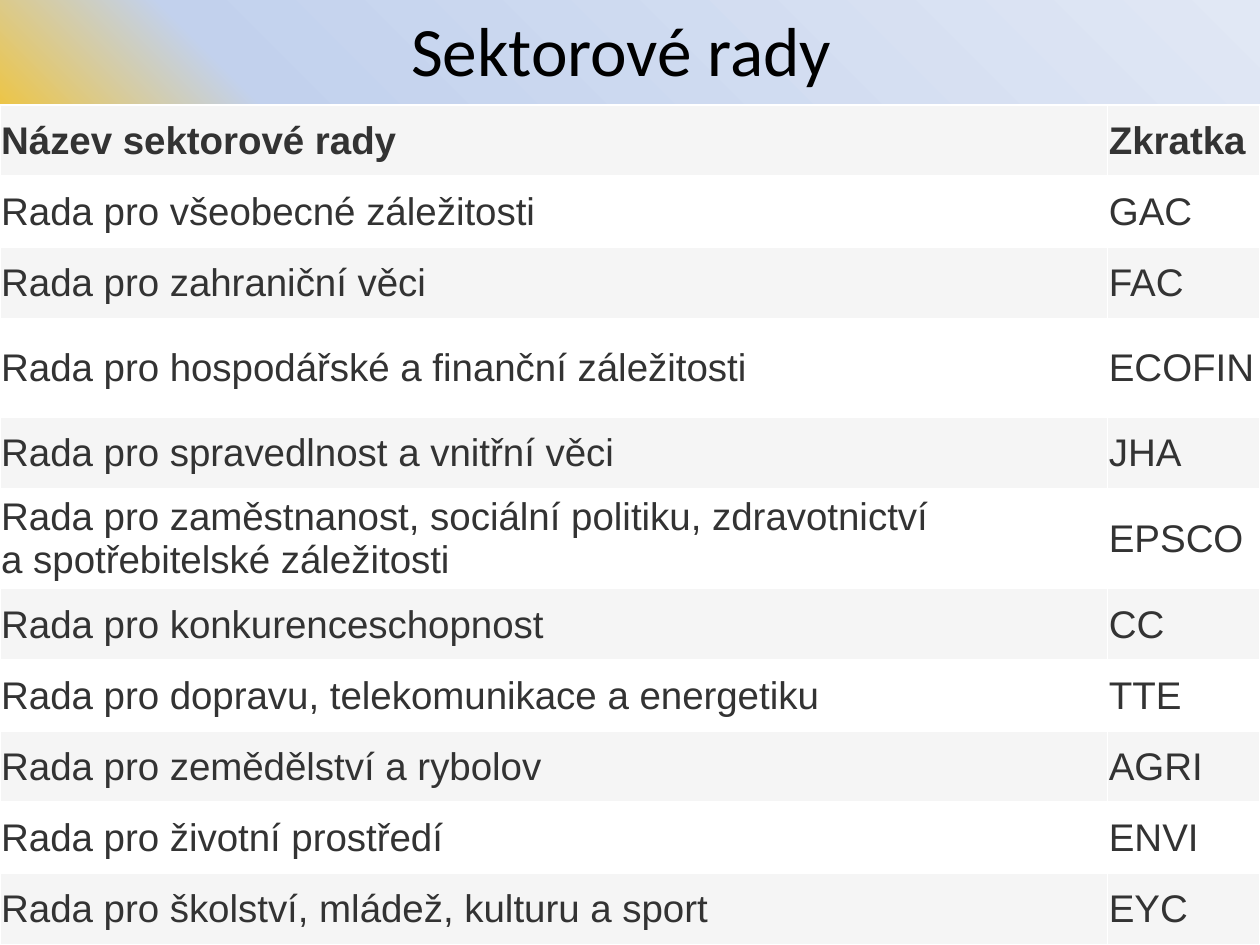
from lxml import etree
from pptx import Presentation
from pptx.dml.color import RGBColor
from pptx.enum.text import MSO_ANCHOR, PP_ALIGN
from pptx.oxml.ns import qn
from pptx.util import Pt

MIDDLE = MSO_ANCHOR.MIDDLE
LEFT, CENTER = PP_ALIGN.LEFT, PP_ALIGN.CENTER

COLORS = {
    "title": "000000",
    "text": "333333",
    "band": "F5F5F5",
    "plain": "FFFFFF",
    "border": "FFFFFF",
}
# Background stops: percent from the centre, colour
STOPS = [(0, "E9DF11"), (0, "17375E"), (15, "FFC000"), (33, "FFC000"),
         (50, "C2D1ED"), (100, "E1E8F5")]

COUNCILS = [
    ("Název sektorové rady", "Zkratka"),
    ("Rada pro všeobecné záležitosti", "GAC"),
    ("Rada pro zahraniční věci", "FAC"),
    ("Rada pro hospodářské a finanční záležitosti", "ECOFIN"),
    ("Rada pro spravedlnost a vnitřní věci", "JHA"),
    ("Rada pro zaměstnanost, sociální politiku, zdravotnictví \v"
     "a spotřebitelské záležitosti", "EPSCO"),
    ("Rada pro konkurenceschopnost", "CC"),
    ("Rada pro dopravu, telekomunikace a energetiku", "TTE"),
    ("Rada pro zemědělství a rybolov", "AGRI"),
    ("Rada pro životní prostředí", "ENVI"),
    ("Rada pro školství, mládež, kulturu a sport", "EYC"),
]
COLUMN_WIDTHS = (633, 87)
ROW_HEIGHT = 40.7
TALL_ROWS = {3: 56.3, 5: 57.4}


def write_text(frame, text, font="Arial", size=22, color="text", bold=False, align=LEFT):
    """Fill a text frame; a vertical tab in the text is a line break."""
    para = frame.paragraphs[0]
    para.text = text
    para.alignment = align
    for span in para.runs:
        span.font.name = font
        span.font.size = Pt(size)
        span.font.bold = bold
        span.font.color.rgb = RGBColor.from_string(COLORS[color])


def add_solid_fill(parent, color):
    fill = etree.SubElement(parent, qn("a:solidFill"))
    etree.SubElement(fill, qn("a:srgbClr"), val=color)


class SlideBuilder:
    def __init__(self, page, inset=0.7, border=1):
        self.page = page
        self.inset = inset
        self.border = border

    def background(self, stops):
        """Circular gradient centred on the bottom left corner."""
        fill = self.page.background.fill
        fill.gradient()
        gradient = self.page.element.find(".//" + qn("a:gradFill"))
        for child in list(gradient):
            gradient.remove(child)
        stop_list = etree.SubElement(gradient, qn("a:gsLst"))
        for percent, color in stops:
            stop = etree.SubElement(stop_list, qn("a:gs"), pos=str(percent * 1000))
            etree.SubElement(stop, qn("a:srgbClr"), val=color)
        circle = etree.SubElement(gradient, qn("a:path"), {"path": "circle"})
        etree.SubElement(circle, qn("a:fillToRect"), t="100000", r="100000")

    def title(self, text, left, top, width, height):
        box = self.page.shapes.add_textbox(Pt(left), Pt(top), Pt(width), Pt(height))
        frame = box.text_frame
        frame.word_wrap = True
        frame.vertical_anchor = MIDDLE
        write_text(frame, text, font="Calibri", size=39.6, color="title", align=CENTER)

    def table(self, rows, left, top, widths, heights):
        frame = self.page.shapes.add_table(
            len(rows), len(widths), Pt(left), Pt(top), Pt(sum(widths)), Pt(sum(heights)))
        table = frame.table
        for column, width in zip(table.columns, widths):
            column.width = Pt(width)
        for index, (texts, height) in enumerate(zip(rows, heights)):
            table.rows[index].height = Pt(height)
            for position, text in enumerate(texts):
                self.cell(table.cell(index, position), text,
                          "plain" if index % 2 else "band", bold=index == 0)

    def cell(self, cell, text, fill, bold):
        cell.margin_left = cell.margin_top = cell.margin_right = Pt(self.inset)
        cell.margin_bottom = 0
        cell.vertical_anchor = MIDDLE
        write_text(cell.text_frame, text, bold=bold)
        # Borders come before the fill in the cell properties
        properties = cell._tc.get_or_add_tcPr()
        for side in ("a:lnL", "a:lnR", "a:lnT", "a:lnB"):
            line = etree.SubElement(properties, qn(side), w=str(Pt(self.border)))
            add_solid_fill(line, COLORS["border"])
        cell.fill.solid()
        cell.fill.fore_color.rgb = RGBColor.from_string(COLORS[fill])


def main():
    deck = Presentation()
    deck.slide_width, deck.slide_height = Pt(720), Pt(540)
    builder = SlideBuilder(deck.slides.add_slide(deck.slide_layouts[6]))

    # Background and heading
    builder.background(STOPS)
    builder.title("Sektorové rady", 31, 0, 648, 55.4)

    # List of councils
    heights = [TALL_ROWS.get(index, ROW_HEIGHT) for index in range(len(COUNCILS))]
    builder.table(COUNCILS, 0, 60, COLUMN_WIDTHS, heights)

    deck.save("out.pptx")


if __name__ == "__main__":
    main()
